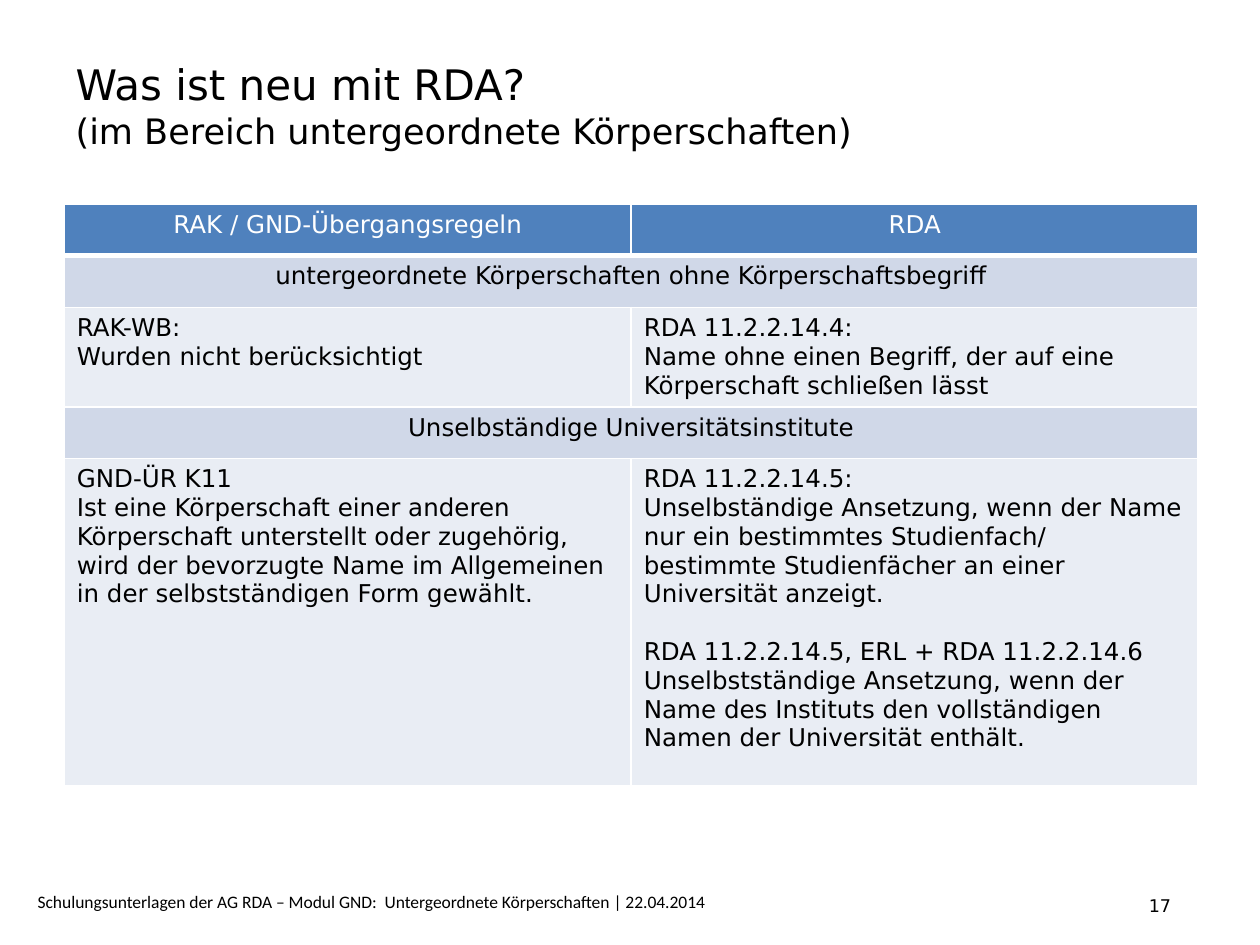
from lxml import etree
from pptx import Presentation
from pptx.dml.color import RGBColor
from pptx.enum.text import MSO_ANCHOR, PP_ALIGN
from pptx.oxml.ns import qn
from pptx.util import Inches, Pt

LEFT, CENTER = PP_ALIGN.LEFT, PP_ALIGN.CENTER
MIDDLE = MSO_ANCHOR.MIDDLE
SANS, FOOTER_FONT = "DejaVu Sans", "Calibri"
BLACK, WHITE = "000000", "FFFFFF"
HEADER, BAND, BODY = "4F81BD", "D0D8E8", "E9EDF4"

ROWS = [
    (HEADER, 0.41, [["RAK / GND-Übergangsregeln"], ["RDA"]]),
    (BAND, 0.41, [["untergeordnete Körperschaften ohne Körperschaftsbegriff"]]),
    (BODY, 0.79, [
        ["RAK-WB:", "Wurden nicht berücksichtigt"],
        ["RDA 11.2.2.14.4:",
         "Name ohne einen Begriff, der auf eine Körperschaft schließen lässt"],
    ]),
    (BAND, 0.41, [["Unselbständige Universitätsinstitute"]]),
    (BODY, 2.6, [
        ["GND-ÜR K11",
         "Ist eine Körperschaft einer anderen Körperschaft unterstellt oder "
         "zugehörig, wird der bevorzugte Name im Allgemeinen in der "
         "selbstständigen Form gewählt."],
        ["RDA 11.2.2.14.5:",
         "Unselbständige Ansetzung, wenn der Name nur ein bestimmtes Studienfach/ "
         "bestimmte Studienfächer an einer Universität anzeigt.",
         "RDA 11.2.2.14.5, ERL + RDA 11.2.2.14.6",
         "Unselbstständige Ansetzung, wenn der Name des Instituts den "
         "vollständigen Namen der Universität enthält."],
    ]),
]


def rgb(color):
    """Turn a hex string into a colour."""
    return RGBColor.from_string(color)


def add_text(p, text, size=14, font=SANS, color=BLACK, align=LEFT, before=0):
    """Add a formatted run to a paragraph."""
    p.alignment = align
    p.space_before = Pt(before)
    r = p.add_run()
    r.text = text
    r.font.size = Pt(size)
    r.font.name = font
    r.font.bold = False
    r.font.color.rgb = rgb(color)


def set_borders(cell, bottom=1):
    """Draw white borders around a table cell."""
    tc_pr = cell._tc.get_or_add_tcPr()
    widths = {"a:lnL": 1, "a:lnR": 1, "a:lnT": 1, "a:lnB": bottom}
    for i, (tag, width) in enumerate(widths.items()):
        ln = etree.Element(qn(tag), w=str(Pt(width)))
        fill = etree.SubElement(ln, qn("a:solidFill"))
        etree.SubElement(fill, qn("a:srgbClr"), val=WHITE)
        tc_pr.insert(i, ln)


def add_title(s, x, y, w, h):
    """Place the two-line title in its placeholder."""
    sp = s.shapes.title
    sp.left, sp.top, sp.width, sp.height = (Inches(v) for v in (x, y, w, h))
    tf = sp.text_frame
    tf.word_wrap = True
    tf.vertical_anchor = MIDDLE
    p = tf.paragraphs[0]
    add_text(p, "Was ist neu mit RDA?", size=24)
    p.add_line_break()
    add_text(p, "(im Bereich untergeordnete Körperschaften)", size=20)


def add_comparison(s, x, y, w):
    """Place the table that compares the old rules with RDA."""
    h = sum(height for _, height, _ in ROWS)
    table = s.shapes.add_table(
        len(ROWS), 2, Inches(x), Inches(y), Inches(w), Inches(h)).table
    for col in table.columns:
        col.width = Inches(w / 2)
    for i, (fill, height, texts) in enumerate(ROWS):
        table.rows[i].height = Inches(height)
        for cell in table.rows[i].cells:
            cell.fill.solid()
            cell.fill.fore_color.rgb = rgb(fill)
            set_borders(cell, bottom=3 if fill == HEADER else 1)
        if len(texts) == 1:
            table.cell(i, 0).merge(table.cell(i, 1))
        for j, lines in enumerate(texts):
            tf = table.cell(i, j).text_frame
            for k, line in enumerate(lines):
                p = tf.paragraphs[0] if k == 0 else tf.add_paragraph()
                add_text(p, line, color=WHITE if fill == HEADER else BLACK,
                         align=LEFT if fill == BODY else CENTER,
                         before=16.5 if k == 2 else 0)


def add_footer_text(s, x, y, w, h, text, font):
    """Place one line of footer text."""
    tf = s.shapes.add_textbox(
        Inches(x), Inches(y), Inches(w), Inches(h)).text_frame
    tf.word_wrap = True
    add_text(tf.paragraphs[0], text, size=10, font=font)


def main():
    """Build and save the slide."""
    prs = Presentation()
    prs.slide_width, prs.slide_height = Inches(10), Inches(7.5)
    s = prs.slides.add_slide(prs.slide_layouts[5])
    add_title(s, 0.5, 0.21, 9, 1.25)
    add_comparison(s, 0.51, 1.62, 9)
    add_footer_text(
        s, 0.2, 7.02, 7.01, 0.27,
        "Schulungsunterlagen der AG RDA – Modul GND:  "
        "Untergeordnete Körperschaften | 22.04.2014", FOOTER_FONT)
    add_footer_text(s, 9.02, 7.05, 0.79, 0.32, "17", SANS)
    prs.save("out.pptx")


if __name__ == "__main__":
    main()
